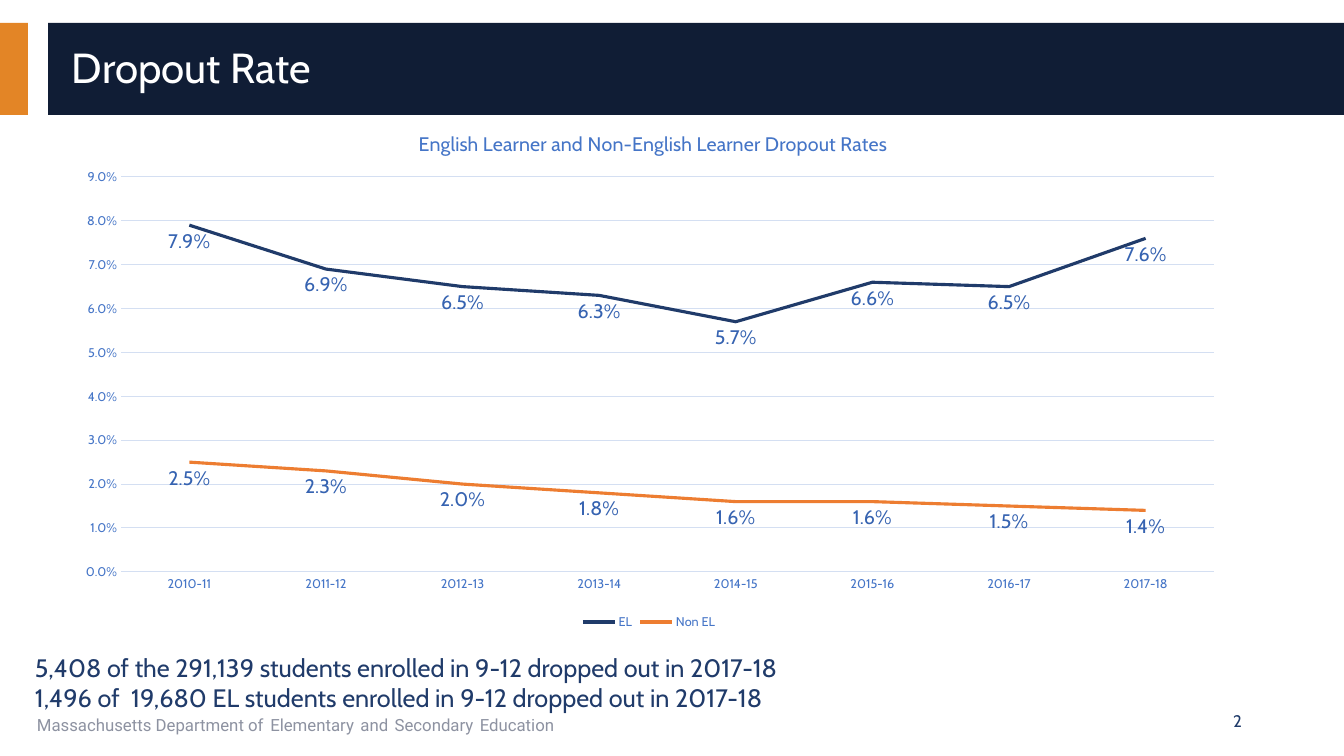
"""Build the dropout rate slide."""
import pptx
import pptx.chart.data
import pptx.dml.color
import pptx.enum.chart
import pptx.enum.shapes
import pptx.enum.text
import pptx.oxml
import pptx.oxml.ns
import pptx.util

PX = 914400 / 100.8
NAVY, BLUE, PALE, GREY = "203B6A", "4575C7", "D4DFF2", "8D92A1"
BARS = [((0, 23, 28, 92), "E38526"), ((48, 23, 1296, 92), "101D35")]
FOOT = ["Massachusetts Department of", "Elementary", "and", "Secondary", "Education"]
NOTES = [
    "5,408 of the 291,139 students enrolled in 9-12 dropped out in 2017-18",
    "1,496 of  19,680 EL students enrolled in 9-12 dropped out in 2017-18",
]
HEAD = "English Learner and Non-English Learner Dropout Rates"
YEARS = ["2010-11", "2011-12", "2012-13", "2013-14",
         "2014-15", "2015-16", "2016-17", "2017-18"]
RATES = [
    ("EL", NAVY, [0.079, 0.069, 0.065, 0.063, 0.057, 0.066, 0.065, 0.076]),
    ("Non EL", "ED7D31", [0.025, 0.023, 0.02, 0.018, 0.016, 0.016, 0.015, 0.014]),
]
FRAME = (62, 107, 1174, 527)
PLOT = (121, 177, 1093, 395)
TITLE = (415, 127)

ALIGN = pptx.enum.text.PP_ALIGN
ANCHOR = pptx.enum.text.MSO_ANCHOR
CHART = pptx.enum.chart


def emu(box):
    return [round(n * PX) for n in box]


def color(hue):
    return pptx.dml.color.RGBColor.from_string(hue)


def style(font, size, hue, face="Cabin"):
    font.size = pptx.util.Pt(size)
    font.name = face
    font.bold = False
    font.color.rgb = color(hue)


def stroke(line, hue, width):
    line.color.rgb = color(hue)
    line.width = pptx.util.Pt(width)


def write(slide, box, paras, anchor=ANCHOR.TOP, align=ALIGN.LEFT, space=1.0):
    frame = slide.shapes.add_textbox(*emu(box)).text_frame
    frame.word_wrap = True
    frame.vertical_anchor = anchor
    for i, runs in enumerate(paras):
        para = frame.add_paragraph() if i else frame.paragraphs[0]
        para.alignment = align
        para.line_spacing = space
        for text, *look in runs:
            run = para.add_run()
            run.text = text
            style(run.font, *look)


def place(node, index, box):
    for old in node.findall(pptx.oxml.ns.qn("c:layout")):
        node.remove(old)
    left, top, wide, high = FRAME
    parts = [(box[0] - left) / wide, (box[1] - top) / high]
    tags = '<c:xMode val="edge"/><c:yMode val="edge"/>'
    if len(box) == 4:
        parts += [box[2] / wide, box[3] / high]
        tags = '<c:layoutTarget val="inner"/>' + tags
    tags += "".join(f'<c:{key} val="{val:.4f}"/>' for key, val in zip("xywh", parts))
    space = pptx.oxml.ns.nsdecls("c")
    node.insert(index, pptx.oxml.parse_xml(
        f"<c:layout {space}><c:manualLayout>{tags}</c:manualLayout></c:layout>"))


def draw(slide):
    data = pptx.chart.data.CategoryChartData(number_format="0.0%")
    data.categories = YEARS
    for name, hue, vals in RATES:
        data.add_series(name, vals)
    chart = slide.shapes.add_chart(
        CHART.XL_CHART_TYPE.LINE, *emu(FRAME), data).chart
    style(chart.font, 10, NAVY)

    chart.has_title = True
    title = chart.chart_title
    run = title.text_frame.paragraphs[0].add_run()
    run.text = HEAD
    style(run.font, 14, BLUE)
    title.include_in_layout = False
    place(title._element, 1, TITLE)
    place(chart._chartSpace.chart.plotArea, 0, PLOT)

    chart.has_legend = True
    chart.legend.position = CHART.XL_LEGEND_POSITION.BOTTOM
    chart.legend.include_in_layout = False
    style(chart.legend.font, 9, BLUE)

    years, rates = chart.category_axis, chart.value_axis
    for axis in (years, rates):
        axis.major_tick_mark = axis.minor_tick_mark = CHART.XL_TICK_MARK.NONE
        style(axis.tick_labels.font, 9, BLUE)
    stroke(years.format.line, PALE, 0.75)
    rates.format.line.fill.background()
    rates.minimum_scale, rates.maximum_scale, rates.major_unit = 0, 0.09, 0.01
    rates.has_major_gridlines = True
    stroke(rates.major_gridlines.format.line, PALE, 0.75)
    rates.tick_labels.number_format = "0.0%"
    rates.tick_labels.number_format_is_linked = False

    plot = chart.plots[0]
    plot.vary_by_categories = False
    for line, (name, hue, vals) in zip(plot.series, RATES):
        line.smooth = False
        stroke(line.format.line, hue, 2.25)
        tags = line.data_labels
        tags.show_value = True
        tags.position = CHART.XL_LABEL_POSITION.BELOW
        tags.number_format = "0.0%"
        tags.number_format_is_linked = False
        style(tags.font, 14, "3663B1")


def main():
    deck = pptx.Presentation()
    deck.slide_width, deck.slide_height = emu((1344, 756))
    slide = deck.slides.add_slide(deck.slide_layouts[6])
    for box, hue in BARS:
        bar = slide.shapes.add_shape(
            pptx.enum.shapes.MSO_SHAPE.RECTANGLE, *emu(box))
        bar.shadow.inherit = False
        bar.fill.solid()
        bar.fill.fore_color.rgb = color(hue)
        bar.line.fill.background()

    foot = []
    for i, word in enumerate(FOOT):
        if i:
            foot.append((" ", 18, NAVY, "Roboto"))
        foot.append((word, 12, GREY, "Roboto"))
    write(slide, (27, 701, 851, 40), [foot])
    write(slide, (62, 32, 1254, 75), [[("Dropout Rate", 30, "FFFFFF")]],
          ANCHOR.MIDDLE, space=0.9)
    write(slide, (950, 701, 302, 40), [[("2", 12, NAVY)]],
          ANCHOR.MIDDLE, ALIGN.RIGHT)
    write(slide, (25, 647, 861, 102), [[(note, 18, NAVY)] for note in NOTES])
    draw(slide)
    deck.save("out.pptx")


if __name__ == "__main__":
    main()
